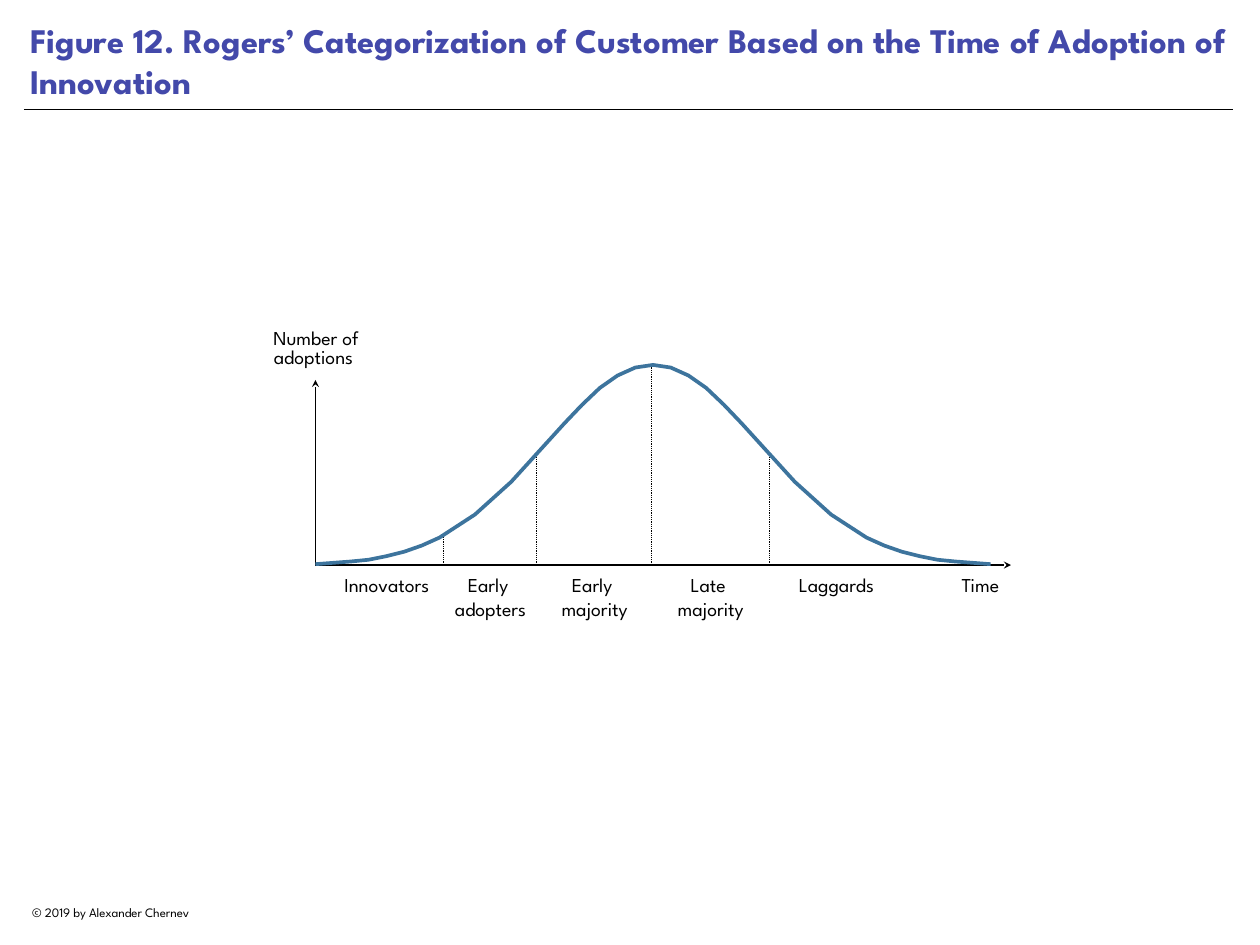
import pptx
import pptx.dml.color
import pptx.enum.dml
import pptx.enum.shapes
import pptx.enum.text
import pptx.oxml.ns
import pptx.util
from lxml import etree

PX = 9144  # 100 px to the inch
FONT = "League Spartan"
BLACK = pptx.dml.color.RGBColor(0x00, 0x00, 0x00)
TITLE_BLUE = pptx.dml.color.RGBColor(0x43, 0x49, 0xAA)
CURVE_BLUE = pptx.dml.color.RGBColor(0x3D, 0x74, 0x9D)
ALIGN = pptx.enum.text.PP_ALIGN

# Half of the bell curve: distance from the peak, height above the baseline
HALF_CURVE = [(381, 1), (341, 4), (321, 6), (301, 10), (281, 15), (261, 22),
              (241, 31), (201, 57), (160, 94), (120, 138), (100, 160),
              (80, 181), (60, 200), (40, 214), (20, 223), (0, 226)]
PEAK = 381

# Segment borders: distance from the vertical axis, height
DIVIDERS = [(145, 34), (250, 126), (379, 225), (512, 125)]

# Labels under the axis: lines, distance from the vertical axis, width
SEGMENTS = [(["Innovators"], 24, 113), (["Early ", "adopters"], 133, 129),
            (["Early ", "majority"], 261, 108), (["Late ", "majority"], 392, 108),
            (["Laggards"], 537, 102), (["Time"], 725, 51)]


def px(length):
    return pptx.util.Emu(length * PX)


def add_run(paragraph, text, size, color=BLACK, bold=False):
    run = paragraph.add_run()
    run.text = text
    run.font.name = FONT
    run.font.size = pptx.util.Pt(size)
    run.font.bold = bold
    run.font.color.rgb = color


def set_margins(frame, margin):
    frame.margin_left = frame.margin_right = px(margin)
    frame.margin_top = frame.margin_bottom = px(margin)


def add_label(slide, lines, box, size=16, wrap=False, spacing=None):
    shape = slide.shapes.add_textbox(*map(px, box))
    frame = shape.text_frame
    set_margins(frame, 0)
    frame.word_wrap = wrap
    paragraph = frame.paragraphs[0]
    paragraph.alignment = ALIGN.CENTER
    if spacing:
        paragraph.line_spacing = spacing
    for index, line in enumerate(lines):
        if index:
            paragraph.add_line_break()
        add_run(paragraph, line, size)


def add_line(slide, start, end, width, arrow=False, dotted=False):
    connector = slide.shapes.add_connector(
        pptx.enum.shapes.MSO_CONNECTOR.STRAIGHT, *map(px, start + end))
    connector.line.color.rgb = BLACK
    connector.line.width = pptx.util.Pt(width)
    if dotted:
        connector.line.dash_style = pptx.enum.dml.MSO_LINE.ROUND_DOT
    if arrow:
        etree.SubElement(connector.line._get_or_add_ln(),
                         pptx.oxml.ns.qn("a:tailEnd"), type="stealth")
    etree.SubElement(connector._element.spPr, pptx.oxml.ns.qn("a:effectLst"))


def add_header(slide, box):
    left, top, width, height = box
    title = slide.shapes.title
    title.left, title.top, title.width, title.height = map(px, box)
    frame = title.text_frame
    set_margins(frame, 7)
    frame.word_wrap = True
    frame.auto_size = pptx.enum.text.MSO_AUTO_SIZE.NONE
    frame.vertical_anchor = pptx.enum.text.MSO_ANCHOR.BOTTOM
    paragraph = frame.paragraphs[0]
    paragraph.alignment = ALIGN.LEFT
    add_run(paragraph, "Figure 12. Rogers’ Categorization of Customer Based "
            "on the Time of Adoption of Innovation", 28, TITLE_BLUE, True)
    rule_y = top + height + 2
    add_line(slide, (left, rule_y), (left + width, rule_y), 0.5)


def add_curve(slide, origin_x, baseline):
    left_half = [(PEAK - distance, height) for distance, height in HALF_CURVE]
    right_half = [(PEAK + distance, height)
                  for distance, height in reversed(HALF_CURVE[:-1])]
    points = [(origin_x + x, baseline - height)
              for x, height in left_half + right_half]
    builder = slide.shapes.build_freeform(*points[0], scale=PX)
    builder.add_line_segments(points[1:], close=False)
    curve = builder.convert_to_shape()
    curve.shadow.inherit = False
    curve.fill.background()
    curve.line.color.rgb = CURVE_BLUE
    curve.line.width = pptx.util.Pt(3)


def add_adoption_diagram(slide, box):
    left, top, width, height = box
    origin_x, baseline = left + 74, top + 265

    # Axes
    add_line(slide, (origin_x, baseline), (left + width, baseline), 1, arrow=True)
    add_line(slide, (origin_x, baseline), (origin_x, top + 56), 1, arrow=True)
    add_label(slide, ["Number of adoptions "], (left, top, 149, 50),
              wrap=True, spacing=0.8)

    # Segment borders and labels
    for distance, border_height in DIVIDERS:
        x = origin_x + distance
        add_line(slide, (x, baseline), (x, baseline - border_height), 0.75,
                 dotted=True)
    label_top = baseline + 9
    for lines, distance, label_width in SEGMENTS:
        add_label(slide, lines, (origin_x + distance, label_top, label_width,
                                 top + height - label_top))

    add_curve(slide, origin_x, baseline)


def add_footer(slide, box):
    add_label(slide, ["© 2019 by Alexander Chernev"], box, size=10.5)


def main():
    presentation = pptx.Presentation()
    presentation.slide_width, presentation.slide_height = px(1422), px(1067)
    slide = presentation.slides.add_slide(presentation.slide_layouts[5])
    add_header(slide, (27, 0, 1364, 122))
    add_adoption_diagram(slide, (282, 373, 859, 330))
    add_footer(slide, (27, 1021, 196, 18))
    presentation.save("out.pptx")


if __name__ == "__main__":
    main()
